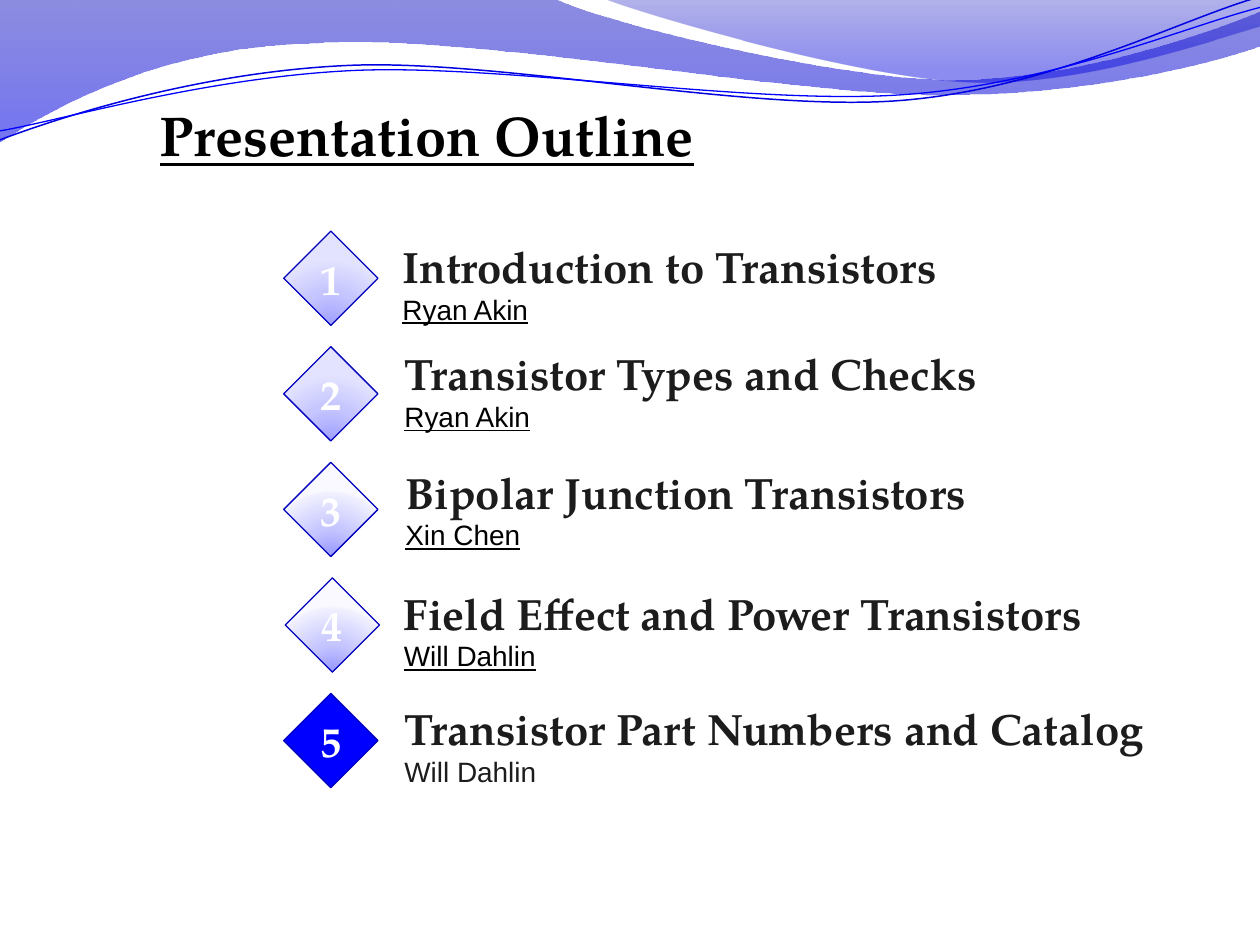
import math

from lxml import etree
from pptx import Presentation
from pptx.dml.color import RGBColor
from pptx.enum import shapes, text
from pptx.oxml import ns
from pptx.util import Cm, Pt

COLORS = {"black": "000000", "ink": "1C1C1C", "white": "FFFFFF", "blue": "0000FF",
          "edge": "0000BD", "strand": "0000E1", "deep": "0000E7"}
SERIF, SANS = "TeX Gyre Pagella", "Arial"

SOFT = [(0, "A0A0FF", 100), (50, "C5C5FF", 100), (100, "E3E3FF", 100)]
GLOSSY = [(0, "9797FF", 100), (43, "C6C6FF", 100), (93, "EEEEFF", 100), (100, "F9F9FF", 100)]

BANDS = [
    ((-0.03, -0.03, 25.45, 2.9),
     [[(0, 0)], [(11.18, -0.03)], [(12.09, 0.43), (16.87, 1.6), (19.25, 1.6)],
      [(21.67, 1.6), (24.33, 0.66), (25.4, 0.23)], [(25.43, 0.91)],
      [(24.97, 1.12), (22.1, 1.93), (18.95, 1.91)],
      [(15.8, 1.91), (9.7, 0.71), (6.53, 0.86)],
      [(3.28, 0.91), (1.17, 2.11), (-0.03, 2.87)]],
     [(0, COLORS["edge"], 45), (100, COLORS["deep"], 55)]),
    ((12.17, -0.03, 13.23, 1.78),
     [[(12.17, -0.03)], [(12.93, 0.28), (17.32, 1.57), (19.53, 1.65)],
      [(21.74, 1.75), (24.41, 0.81), (25.4, 0.53)], [(25.4, 0)]],
     [(0, COLORS["edge"], 30), (80, COLORS["strand"], 45)]),
]
STRANDS = [
    ((-0.05, 0.56, 25.45, 1.8),
     [[(0, 2.82)], [(1.22, 2.36), (4.01, 1.45), (7.04, 1.32)],
      [(10.03, 1.19), (15.06, 2.26), (18.11, 2.03)],
      [(21.16, 1.8), (23.83, 0.38), (25.35, -0.05)]],
     "strand", 0.85),
    ((-0.05, 0.76, 25.48, 1.47),
     [[(0, 2.64)], [(1.19, 2.44), (4.17, 1.55), (7.19, 1.42)],
      [(10.24, 1.3), (15.16, 2.13), (18.21, 1.91)],
      [(21.23, 1.7), (23.9, 0.53), (25.4, 0.15)]],
     "blue", 0.75),
]
TILT = 2.7

TOPICS = [
    ("Introduction to Transistors", "Ryan Akin", SOFT, 5.72, 2.08, 0.39),
    ("Transistor Types and Checks", "Ryan Akin", SOFT, 5.72, 2.12, 0.22),
    ("Bipolar Junction Transistors", "Xin Chen", GLOSSY, 5.72, 2.14, 0.28),
    ("Field Effect and Power Transistors", "Will Dahlin", GLOSSY, 5.75, 2.08, 0.39),
    ("Transistor Part Numbers and Catalog", "Will Dahlin", None, 5.72, 2.12, 0.39),
]


def rgb(name):
    """Return the named colour."""
    return RGBColor.from_string(COLORS[name])


def turn(point, center, degrees):
    """Rotate a point clockwise about a center."""
    cos, sin = math.cos(math.radians(degrees)), math.sin(math.radians(degrees))
    x, y = point[0] - center[0], point[1] - center[1]
    return center[0] + x * cos - y * sin, center[1] + x * sin + y * cos


def add_outline(page, bounds, segments, close, tilt=0):
    """Draw an outline of lines and cubic curves inside its bounds."""
    left, top, width, height = bounds
    center = (left + width / 2, top + height / 2)
    builder = page.shapes.build_freeform(Cm(left), Cm(top), scale=1.0)
    builder.add_line_segments([(Cm(left + width), Cm(top + height))], close=close)
    shape = builder.convert_to_shape()
    shape.shadow.inherit = False
    outline = shape.element.spPr.find(".//" + ns.qn("a:path"))
    for child in list(outline):
        outline.remove(child)
    for index, segment in enumerate(segments):
        kind = "a:cubicBezTo" if len(segment) == 3 else "a:lnTo" if index else "a:moveTo"
        command = etree.SubElement(outline, ns.qn(kind))
        for point in segment:
            x, y = turn(point, center, tilt)
            etree.SubElement(command, ns.qn("a:pt"), x=str(Cm(x - left)), y=str(Cm(y - top)))
    if close:
        etree.SubElement(outline, ns.qn("a:close"))
    shape.rotation = -tilt
    return shape


def fill_gradient(shape, stops, radial=False):
    """Fill a shape with a downward gradient or one radiating from below it."""
    shape.fill.background()
    blank = shape.element.spPr.find(ns.qn("a:noFill"))
    gradient = etree.Element(ns.qn("a:gradFill"), rotWithShape="1")
    stop_list = etree.SubElement(gradient, ns.qn("a:gsLst"))
    for position, color, opacity in stops:
        stop = etree.SubElement(stop_list, ns.qn("a:gs"), pos=str(position * 1000))
        tone = etree.SubElement(stop, ns.qn("a:srgbClr"), val=color)
        if opacity < 100:
            etree.SubElement(tone, ns.qn("a:alpha"), val=str(opacity * 1000))
    if radial:
        focus = etree.SubElement(gradient, ns.qn("a:path"))
        focus.set("path", "circle")
        etree.SubElement(focus, ns.qn("a:fillToRect"),
                         l="50000", t="130000", r="50000", b="-30000")
    else:
        etree.SubElement(gradient, ns.qn("a:lin"), ang="5400000", scaled="0")
    blank.getparent().replace(blank, gradient)


def style_para(para, size, face, color, bold=False, underline=False):
    """Format every run of a paragraph."""
    for span in para.runs:
        span.font.size, span.font.name = Pt(size), face
        span.font.bold, span.font.underline = bold, underline
        span.font.color.rgb = rgb(color)


def add_header(page):
    """Draw the wave bands and the two thin strands."""
    for bounds, segments, stops in BANDS:
        band = add_outline(page, bounds, segments, True)
        fill_gradient(band, stops)
        band.line.fill.background()
    for bounds, segments, color, width in STRANDS:
        strand = add_outline(page, bounds, segments, False, TILT)
        strand.fill.background()
        strand.line.color.rgb = rgb(color)
        strand.line.width = Pt(width)


def add_title(page, left, top, width, height):
    """Place the underlined slide title."""
    box = page.shapes.add_textbox(Cm(left), Cm(top), Cm(width), Cm(height))
    box.text_frame.word_wrap = True
    box.text_frame.text = "Presentation Outline"
    style_para(box.text_frame.paragraphs[0], 32, SERIF, "black", True, True)


def add_diamond(page, left, top, size, number, stops):
    """Place a numbered diamond, solid when no gradient is given."""
    diamond = page.shapes.add_shape(shapes.MSO_SHAPE.DIAMOND,
                                    Cm(left), Cm(top), Cm(size), Cm(size))
    diamond.shadow.inherit = False
    if stops:
        fill_gradient(diamond, stops, radial=True)
    else:
        diamond.fill.solid()
        diamond.fill.fore_color.rgb = rgb("blue")
    diamond.line.color.rgb = rgb("edge")
    diamond.line.width = Pt(0.75)
    frame = diamond.text_frame
    frame.word_wrap = False
    frame.vertical_anchor = text.MSO_ANCHOR.MIDDLE
    frame.text = str(number)
    frame.paragraphs[0].alignment = text.PP_ALIGN.CENTER
    style_para(frame.paragraphs[0], 24, SERIF, "white", True)


def add_label(page, left, top, topic, speaker, current):
    """Place a topic with its speaker below."""
    box = page.shapes.add_shape(shapes.MSO_SHAPE.ROUNDED_RECTANGLE,
                                Cm(left), Cm(top), Cm(10.01), Cm(1.3))
    box.shadow.inherit = False
    box.fill.background()
    box.line.fill.background()
    frame = box.text_frame
    frame.word_wrap = False
    frame.vertical_anchor = text.MSO_ANCHOR.MIDDLE
    frame.text = f"{topic}\n{speaker}"
    for para in frame.paragraphs:
        para.alignment = text.PP_ALIGN.LEFT
    style_para(frame.paragraphs[0], 25, SERIF, "ink", True)
    style_para(frame.paragraphs[1], 16, SANS, "ink" if current else "black",
               underline=not current)


def add_outline_list(page, top, pitch):
    """Stack the numbered topics at an even pitch."""
    for index, (topic, speaker, stops, left, shift, drop) in enumerate(TOPICS):
        row = top + index * pitch
        add_diamond(page, left, row, 1.9, index + 1, stops)
        add_label(page, left + shift, row + drop, topic, speaker, stops is None)


def main():
    """Build and save the deck."""
    deck = Presentation()
    deck.slide_width, deck.slide_height = Cm(25.4), Cm(19.05)
    page = deck.slides.add_slide(deck.slide_layouts[6])
    add_header(page)
    add_title(page, 2.97, 1.9, 19.69, 1.68)
    add_outline_list(page, 4.66, 2.33)
    deck.save("out.pptx")


if __name__ == "__main__":
    main()
